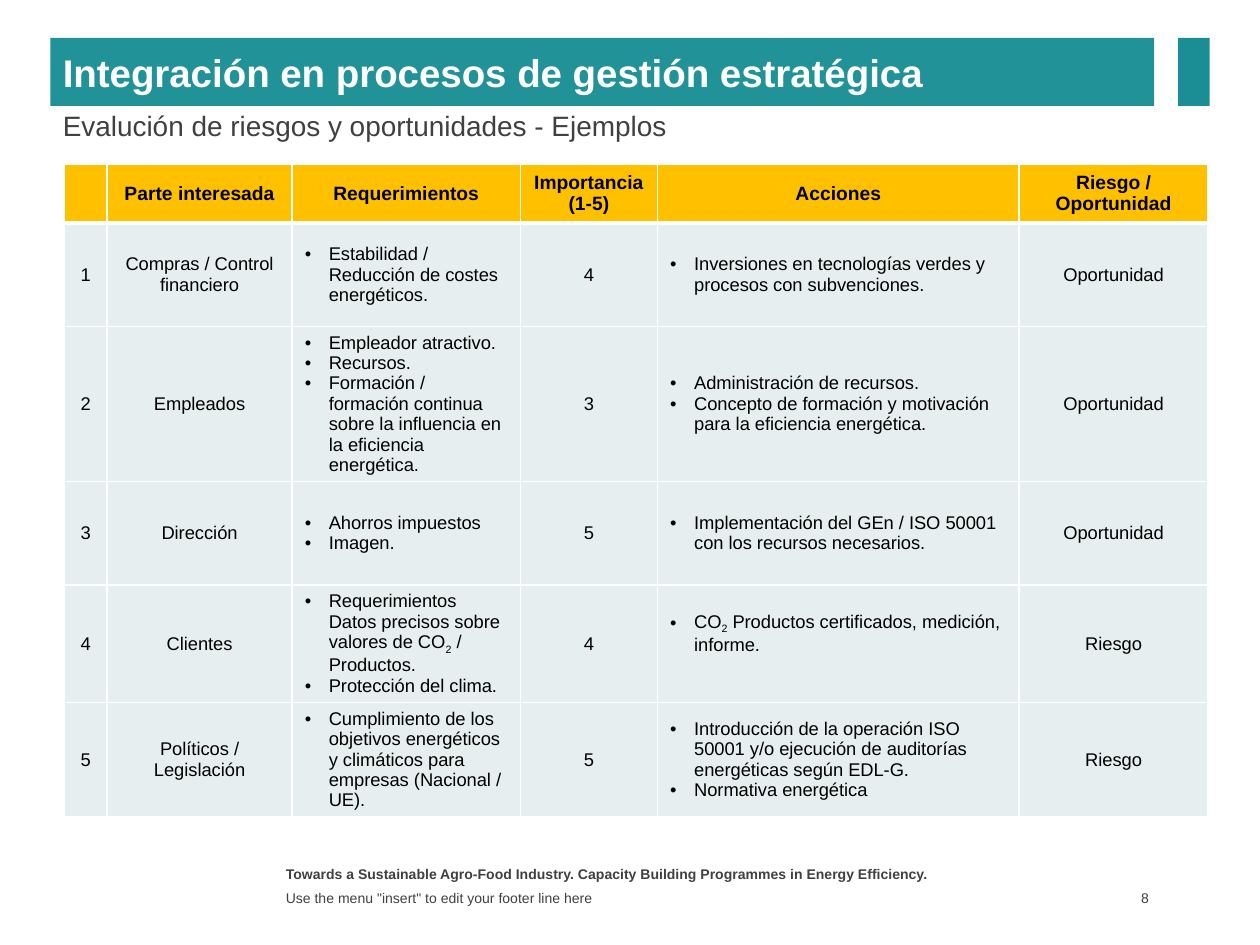
"""Build a slide with a table of risks and opportunities by interested party."""
from dataclasses import dataclass

from lxml import etree
from pptx import Presentation
from pptx import util as u
from pptx.dml.color import RGBColor
from pptx.enum import shapes, text
from pptx.oxml import ns

PX = 9144
LEFT, CENTER, RIGHT = text.PP_ALIGN.LEFT, text.PP_ALIGN.CENTER, text.PP_ALIGN.RIGHT
TOP, MIDDLE = text.MSO_ANCHOR.TOP, text.MSO_ANCHOR.MIDDLE


@dataclass(frozen=True)
class Theme:
    font: str = "Arial"
    title_fill: str = "209298"
    accent: str = "1B8E95"
    header_fill: str = "FFC000"
    row_fill: str = "E7EEEF"
    white: str = "FFFFFF"
    black: str = "000000"
    gray: str = "404040"
    title: float = 22
    subtitle: float = 16
    header: float = 11
    body: float = 10.5
    footer: float = 8


@dataclass(frozen=True)
class Box:
    x: int
    y: int
    w: int
    h: int

    def emu(self) -> list[int]:
        return [v * PX for v in (self.x, self.y, self.w, self.h)]


@dataclass(frozen=True)
class Label:
    words: str
    box: Box
    size: float
    bold: bool = False
    align: text.PP_ALIGN = LEFT
    anchor: text.MSO_ANCHOR = MIDDLE
    right: int = 10


@dataclass(frozen=True)
class Party:
    name: str
    needs: str
    weight: int
    actions: str
    outcome: str
    actions_bottom: int = 5


T = Theme()
COLUMNS = (34, 147, 181, 109, 287, 150)
HEADER_H, ROW_H = 47, 82
BULLETED = (2, 4)
HEADERS = ("", "Parte interesada", "Requerimientos", "Importancia\n(1-5)", "Acciones",
           "Riesgo / Oportunidad")
PARTIES = (
    Party("Compras / Control financiero", "Estabilidad / Reducción de costes energéticos.", 4,
          "Inversiones en tecnologías verdes y procesos con subvenciones.", "Oportunidad"),
    Party("Empleados",
          "Empleador atractivo.\nRecursos.\nFormación / formación continua sobre la influencia "
          "en la eficiencia energética.", 3,
          "Administración de recursos.\nConcepto de formación y motivación para la eficiencia "
          "energética.", "Oportunidad"),
    Party("Dirección", "Ahorros impuestos\nImagen.", 5,
          "Implementación del GEn / ISO 50001 con los recursos necesarios.", "Oportunidad"),
    Party("Clientes",
          "Requerimientos Datos precisos sobre valores de CO₂ / Productos.\n"
          "Protección del clima.", 4,
          "CO₂ Productos certificados, medición, informe.", "Riesgo", actions_bottom=21),
    Party("Políticos / Legislación",
          "Cumplimiento de los objetivos energéticos y climáticos para empresas "
          "(Nacional / UE).", 5,
          "Introducción de la operación ISO 50001 y/o ejecución de auditorías energéticas "
          "según EDL-G.\nNormativa energética", "Riesgo"),
)
LABELS = (
    Label("Towards a Sustainable Agro-Food Industry. Capacity Building Programmes in Energy "
          "Efficiency.", Box(217, 682, 550, 21), T.footer, bold=True, anchor=TOP),
    Label('Use the menu "insert" to edit your footer line here', Box(217, 703, 550, 19),
          T.footer),
    Label("8", Box(860, 703, 56, 20), T.footer, align=RIGHT, right=4),
    Label("Evalución de riesgos y oportunidades - Ejemplos", Box(40, 84, 919, 31), T.subtitle),
)


def rgb(color: str) -> RGBColor:
    return RGBColor.from_string(color)


def add_bullet(p) -> None:
    pr = p._p.get_or_add_pPr()
    pr.set("marL", str(19 * PX))
    pr.set("indent", str(-19 * PX))
    etree.SubElement(pr, ns.qn("a:buFont")).set("typeface", T.font)
    etree.SubElement(pr, ns.qn("a:buChar")).set("char", "•")


def write(tf, words: str, *, size: float, color: str, bold: bool = False,
          align: text.PP_ALIGN = LEFT, bullet: bool = False) -> None:
    for i, line in enumerate(words.split("\n")):
        p = tf.add_paragraph() if i else tf.paragraphs[0]
        p.alignment = align
        if bullet:
            add_bullet(p)
        for part in line.replace("₂", "\t₂\t").split("\t"):
            if not part:
                continue
            r = p.add_run()
            r.text = part.replace("₂", "2")
            f = r.font
            f.name, f.size, f.bold = T.font, u.Pt(size), bold
            f.color.rgb = rgb(color)
            if part == "₂":
                r._r.get_or_add_rPr().set("baseline", "-25000")


def add_label(s, label: Label) -> None:
    sp = s.shapes.add_textbox(*label.box.emu())
    tf = sp.text_frame
    tf.word_wrap, tf.vertical_anchor = True, label.anchor
    tf.margin_right = label.right * PX
    write(tf, label.words, size=label.size, color=T.gray, bold=label.bold, align=label.align)


def add_bar(s, box: Box, fill: str, words: str = "") -> None:
    sp = s.shapes.add_shape(shapes.MSO_SHAPE.RECTANGLE, *box.emu())
    sp.shadow.inherit = False
    sp.fill.solid()
    sp.fill.fore_color.rgb = rgb(fill)
    sp.line.fill.background()
    if words:
        sp.text_frame.vertical_anchor = MIDDLE
        write(sp.text_frame, words, size=T.title, color=T.white, bold=True)


def style_cell(cell, fill: str, top: float, bottom: float) -> None:
    pr = cell._tc.get_or_add_tcPr()
    for side, width in (("L", 1), ("R", 1), ("T", top), ("B", bottom)):
        ln = etree.SubElement(pr, ns.qn(f"a:ln{side}"), w=str(u.Pt(width)))
        paint = etree.SubElement(ln, ns.qn("a:solidFill"))
        etree.SubElement(paint, ns.qn("a:srgbClr")).set("val", T.white)
    cell.fill.solid()
    cell.fill.fore_color.rgb = rgb(fill)
    cell.vertical_anchor = MIDDLE


def add_risk_table(s) -> None:
    box = Box(51, 130, sum(COLUMNS), HEADER_H + ROW_H * len(PARTIES))
    table = s.shapes.add_table(len(PARTIES) + 1, len(COLUMNS), *box.emu()).table
    table.horz_banding = False
    for column, width in zip(table.columns, COLUMNS):
        column.width = width * PX
    for i, row in enumerate(table.rows):
        row.height = (ROW_H if i else HEADER_H) * PX
    for j, words in enumerate(HEADERS):
        cell = table.cell(0, j)
        style_cell(cell, T.header_fill, 1, 3)
        write(cell.text_frame, words, size=T.header, color=T.black, bold=True, align=CENTER)
    for i, party in enumerate(PARTIES, 1):
        values = (str(i), party.name, party.needs, str(party.weight), party.actions,
                  party.outcome)
        for j, words in enumerate(values):
            cell = table.cell(i, j)
            style_cell(cell, T.row_fill, 3 if i == 1 else 1, 1)
            bullet = j in BULLETED
            write(cell.text_frame, words, size=T.body, color=T.black,
                  align=LEFT if bullet else CENTER, bullet=bullet)
        table.cell(i, 4).margin_bottom = party.actions_bottom * PX


def main() -> None:
    prs = Presentation()
    prs.slide_width, prs.slide_height = 1000 * PX, 750 * PX
    s = prs.slides.add_slide(prs.slide_layouts[6])
    add_risk_table(s)
    for label in LABELS:
        add_label(s, label)
    add_bar(s, Box(40, 30, 876, 54), T.title_fill,
            "Integración en procesos de gestión estratégica")
    add_bar(s, Box(935, 30, 25, 54), T.accent)
    prs.save("out.pptx")


if __name__ == "__main__":
    main()
